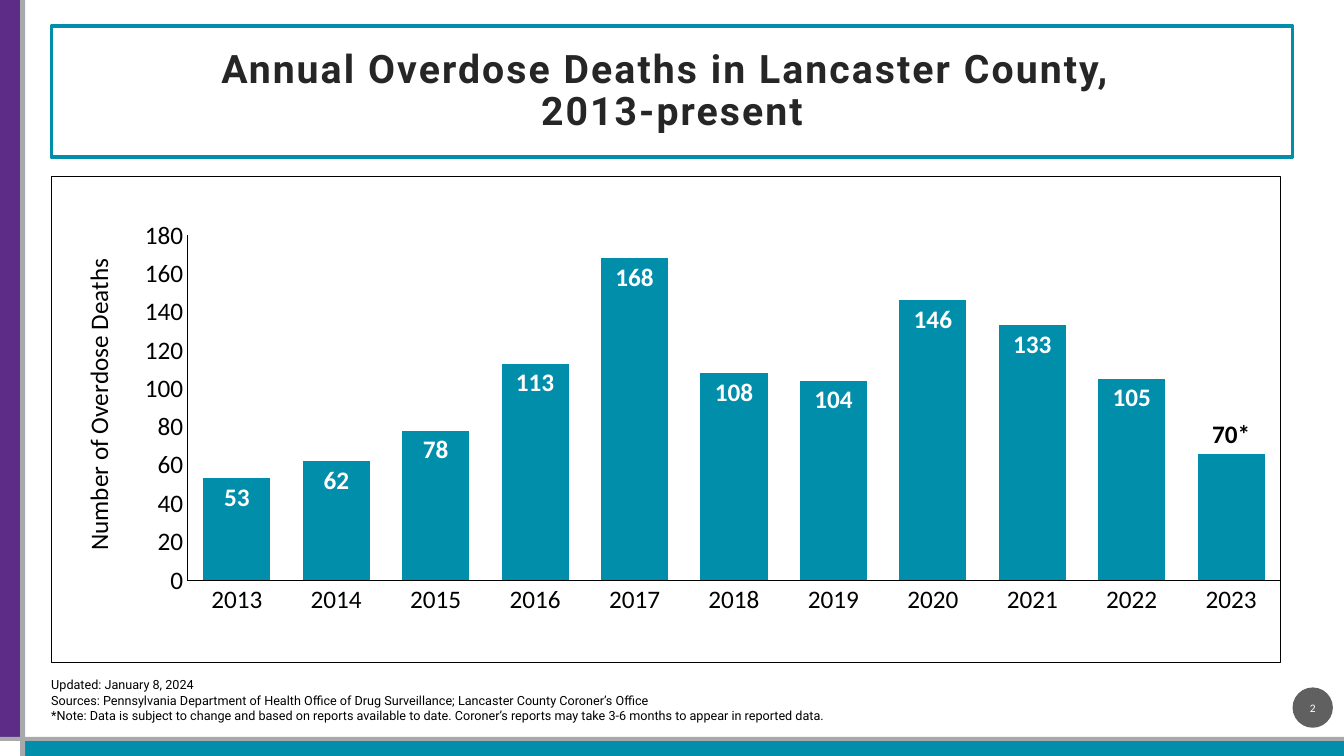
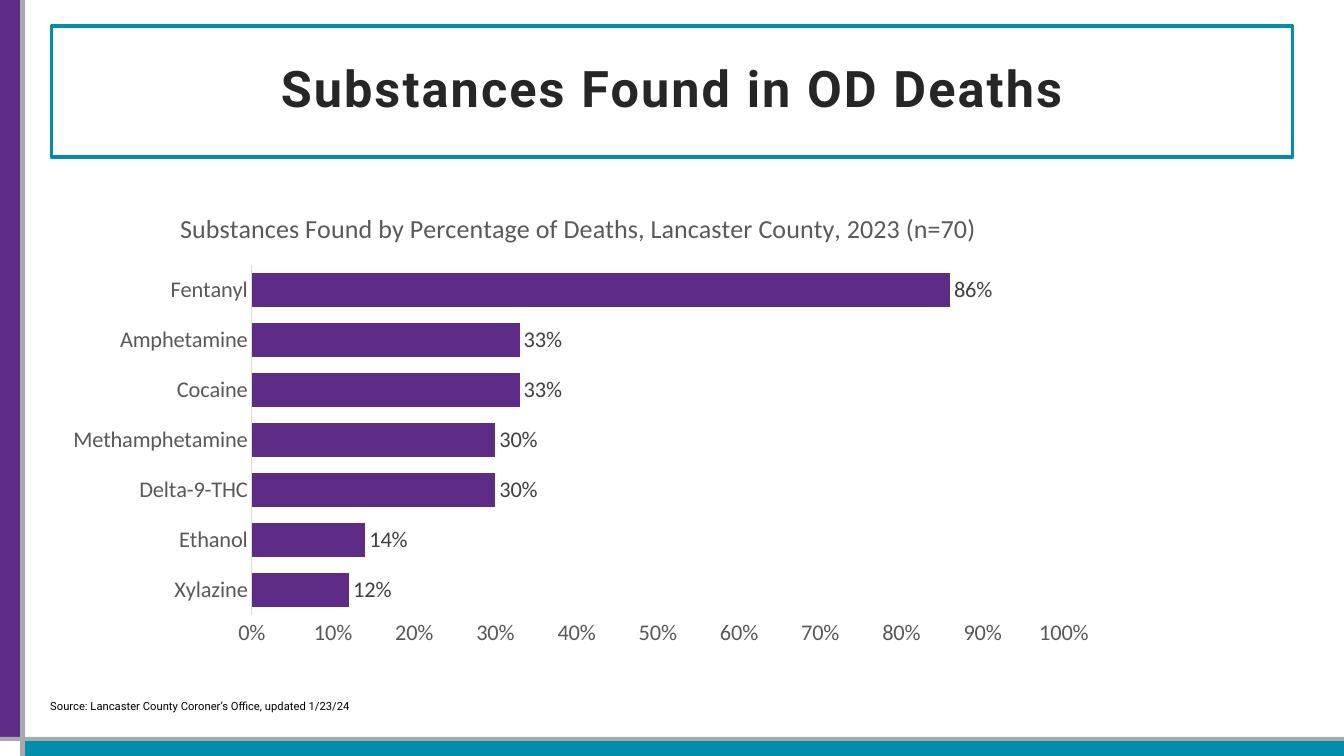
from pptx import Presentation
from pptx.chart.data import CategoryChartData
from pptx.dml.color import RGBColor
from pptx.enum.chart import XL_CHART_TYPE, XL_LABEL_POSITION, XL_TICK_MARK
from pptx.enum.shapes import MSO_SHAPE
from pptx.enum.text import MSO_ANCHOR, PP_ALIGN
from pptx.oxml import parse_xml
from pptx.oxml.ns import nsdecls, qn
from pptx.util import Inches, Pt

RECT, OVAL = MSO_SHAPE.RECTANGLE, MSO_SHAPE.OVAL
COLUMN, BAR = XL_CHART_TYPE.COLUMN_CLUSTERED, XL_CHART_TYPE.BAR_CLUSTERED
INSIDE, OUTSIDE = XL_LABEL_POSITION.INSIDE_END, XL_LABEL_POSITION.OUTSIDE_END
NO_TICK = XL_TICK_MARK.NONE
LEFT, CENTER = PP_ALIGN.LEFT, PP_ALIGN.CENTER
MIDDLE = MSO_ANCHOR.MIDDLE


class Theme:
    teal = RGBColor.from_string("008EAA")
    purple = RGBColor.from_string("5D2C86")
    silver = RGBColor.from_string("A7A9AC")
    pale = RGBColor.from_string("D9D9D9")
    gray = RGBColor.from_string("595959")
    dark = RGBColor.from_string("404040")
    ink = RGBColor.from_string("262626")
    badge = RGBColor.from_string("1D1D1D")
    black = RGBColor.from_string("000000")
    white = RGBColor.from_string("FFFFFF")
    head, body = "Roboto", "Calibri"
    frame, hair = Pt(2.5), Pt(0.75)
    number = 8.2
    caption = 18.6


def add_box(slide, area, text="", size=12, color=Theme.black, font=Theme.head,
            bold=False, align=LEFT, fill=None, shape=RECT, inset=(0.1, 0)):
    """Add a shape with an optional fill and styled text."""
    box = slide.shapes.add_shape(shape, *map(Inches, area))
    box.shadow.inherit = False
    box.line.fill.background()
    if fill is None:
        box.fill.background()
    else:
        box.fill.solid()
        box.fill.fore_color.rgb = fill
    frame = box.text_frame
    frame.word_wrap = True
    frame.vertical_anchor = MIDDLE
    frame.margin_left = frame.margin_right = Inches(inset[0])
    frame.margin_top = frame.margin_bottom = Inches(inset[1])
    if text:
        frame.text = text
    for para in frame.paragraphs:
        para.alignment = align
        for run in para.runs:
            run.font.name, run.font.size = font, Pt(size)
            run.font.bold, run.font.color.rgb = bold, color
    return box


def set_layout(part, spot, target="", **sizes):
    """Give a chart part a fixed place, in fractions of the chart."""
    for old in part.findall(qn("c:layout")):
        part.remove(old)
    inner = f'<c:layoutTarget val="{target}"/>' if target else ""
    inner += '<c:xMode val="edge"/><c:yMode val="edge"/>'
    inner += "".join(f'<c:{key} val="{val}"/>' for key, val in sizes.items())
    part.insert(spot, parse_xml(
        f'<c:layout {nsdecls("c")}><c:manualLayout>{inner}</c:manualLayout></c:layout>'))


# Bands in drawing order: area and colour
BANDS = [
    ((0.22, 7.35, 13.11, 0.15), Theme.teal),
    ((0, 0, 0.2, 7.31), Theme.purple),
    ((0, 7.31, 13.33, 0.04), Theme.silver),
    ((0.2, 0, 0.05, 7.5), Theme.silver),
]

# What differs between the slides
PAGES = [
    dict(
        title="Annual Overdose Deaths in Lancaster County, \v2013-present",
        size=28,
        note="Updated: January 8, 2024\n"
             "Sources: Pennsylvania Department of Health Office of Drug Surveillance; "
             "Lancaster County Coroner’s Office\n"
             "*Note: Data is subject to change and based on reports available to date. "
             "Coroner’s reports may take 3-6 months to appear in reported data.",
        place=(0.41, 6.72, 8.52, 0.45), small=9,
        kind=COLUMN, area=(0.51, 1.75, 12.2, 4.83),
        cats=[str(year) for year in range(2013, 2024)],
        vals=[53, 62, 78, 113, 168, 108, 104, 146, 133, 105, 66],
        type=18, text=Theme.black, axis=Theme.black, fill=Theme.teal, gap=48,
        top=180, step=20, format="General",
        spot=INSIDE, label=Theme.white, bold=True,
        plot=dict(x=0.11, y=0.12, w=0.89, h=0.71),
    ),
    dict(
        title="Substances Found in OD Deaths",
        size=36,
        note="Source: Lancaster County Coroner’s Office, updated 1/23/24",
        place=(0.4, 6.79, 9.74, 0.42), small=8,
        kind=BAR, area=(0.51, 1.89, 10.46, 4.63),
        cats=["Xylazine", "Ethanol", "Delta-9-THC", "Methamphetamine",
              "Cocaine", "Amphetamine", "Fentanyl"],
        vals=[0.12, 0.14, 0.3, 0.3, 0.33, 0.33, 0.86],
        type=16, text=Theme.gray, axis=Theme.pale, fill=Theme.purple, gap=50,
        top=1, step=0.1, format="0%",
        spot=OUTSIDE, label=Theme.dark, bold=False,
        plot=dict(x=0.19, y=0.16, w=0.77, h=0.75),
    ),
]

deck = Presentation()
deck.slide_width, deck.slide_height = Inches(13.33), Inches(7.5)
charts = []

for page in PAGES:
    slide = deck.slides.add_slide(deck.slide_layouts[6])

    # Bands, title and source note
    for area, color in BANDS:
        add_box(slide, area, fill=color)
    title = add_box(slide, (0.51, 0.26, 12.31, 1.3), page["title"], page["size"],
                    Theme.ink, bold=True, align=CENTER, fill=Theme.white,
                    inset=(0.2, 0.2))
    title.line.color.rgb, title.line.width = Theme.teal, Theme.frame
    para = title.text_frame.paragraphs[0]
    para.line_spacing = 0.9
    for run in para.runs:
        run.font._element.set("spc", "150")
    add_box(slide, page["place"], page["note"], page["small"])

    # Chart and its bars
    data = CategoryChartData(number_format=page["format"])
    data.categories = page["cats"]
    data.add_series("Series 1", page["vals"])
    chart = slide.shapes.add_chart(
        page["kind"], *map(Inches, page["area"]), data).chart
    charts.append(chart)
    chart.has_legend = chart.has_title = False
    chart.font.name, chart.font.size = Theme.body, Pt(page["type"])
    chart.font.color.rgb = page["text"]
    plot = chart.plots[0]
    plot.gap_width, plot.vary_by_categories = page["gap"], False
    bars = plot.series[0].format.fill
    bars.solid()
    bars.fore_color.rgb = page["fill"]

    # Axes
    for axis in (chart.category_axis, chart.value_axis):
        axis.has_major_gridlines = False
        axis.major_tick_mark = axis.minor_tick_mark = NO_TICK
        axis.format.line.color.rgb = page["axis"]
        axis.format.line.width = Theme.hair
    axis = chart.value_axis
    axis.minimum_scale, axis.maximum_scale = 0, page["top"]
    axis.major_unit = page["step"]
    axis.tick_labels.number_format = page["format"]
    axis.tick_labels.number_format_is_linked = False

    # Data labels
    labels = plot.series[0].data_labels
    labels.show_value, labels.position = True, page["spot"]
    labels.number_format = page["format"]
    labels.number_format_is_linked = False
    labels.font.name, labels.font.size = Theme.body, Pt(page["type"])
    labels.font.bold, labels.font.color.rgb = page["bold"], page["label"]
    set_layout(chart._chartSpace.chart.plotArea, 0, "inner", **page["plot"])

yearly, drugs = charts

# Yearly chart: border, axis title and marked last bar
yearly._chartSpace.chart.addnext(parse_xml(
    f'<c:spPr {nsdecls("c", "a")}>'
    f'<a:solidFill><a:srgbClr val="{Theme.white}"/></a:solidFill>'
    f'<a:ln w="{Theme.hair}"><a:solidFill><a:srgbClr val="{Theme.black}"/>'
    '</a:solidFill></a:ln></c:spPr>'))
name = yearly.value_axis.axis_title
name.text_frame.text = "Number of Overdose Deaths"
name.text_frame._txBody.bodyPr.set("rot", "-5400000")
set_layout(name._element, 1, x=0.02, y=0.16)
mark = yearly.plots[0].series[0].points[10].data_label
mark.text_frame.text = "70*"
mark.position = OUTSIDE

# Drug chart: title, no line on the value axis
drugs.value_axis.format.line.fill.background()
drugs.has_title = True
drugs.chart_title.text_frame.text = PAGES[1].get(
    "caption", "Substances Found by Percentage of Deaths, Lancaster County, 2023 (n=70)")
drugs.chart_title.include_in_layout = False

# Text inside the charts
for frame, size, bold, color in [
        (name.text_frame, 18, False, Theme.black),
        (mark.text_frame, 18, True, Theme.black),
        (drugs.chart_title.text_frame, Theme.caption, False, Theme.gray)]:
    font = frame.paragraphs[0].runs[0].font
    font.name, font.size = Theme.body, Pt(size)
    font.bold, font.color.rgb = bold, color

# Page number
badge = add_box(deck.slides[0], (12.82, 6.82, 0.4, 0.4), "2", Theme.number,
                Theme.white, Theme.body, align=CENTER, fill=Theme.badge,
                shape=OVAL, inset=(0.02, 0.05))
tint = badge._element.spPr.find(qn("a:solidFill"))[0]
tint.append(parse_xml(f'<a:alpha {nsdecls("a")} val="70000"/>'))

deck.save("out.pptx")
